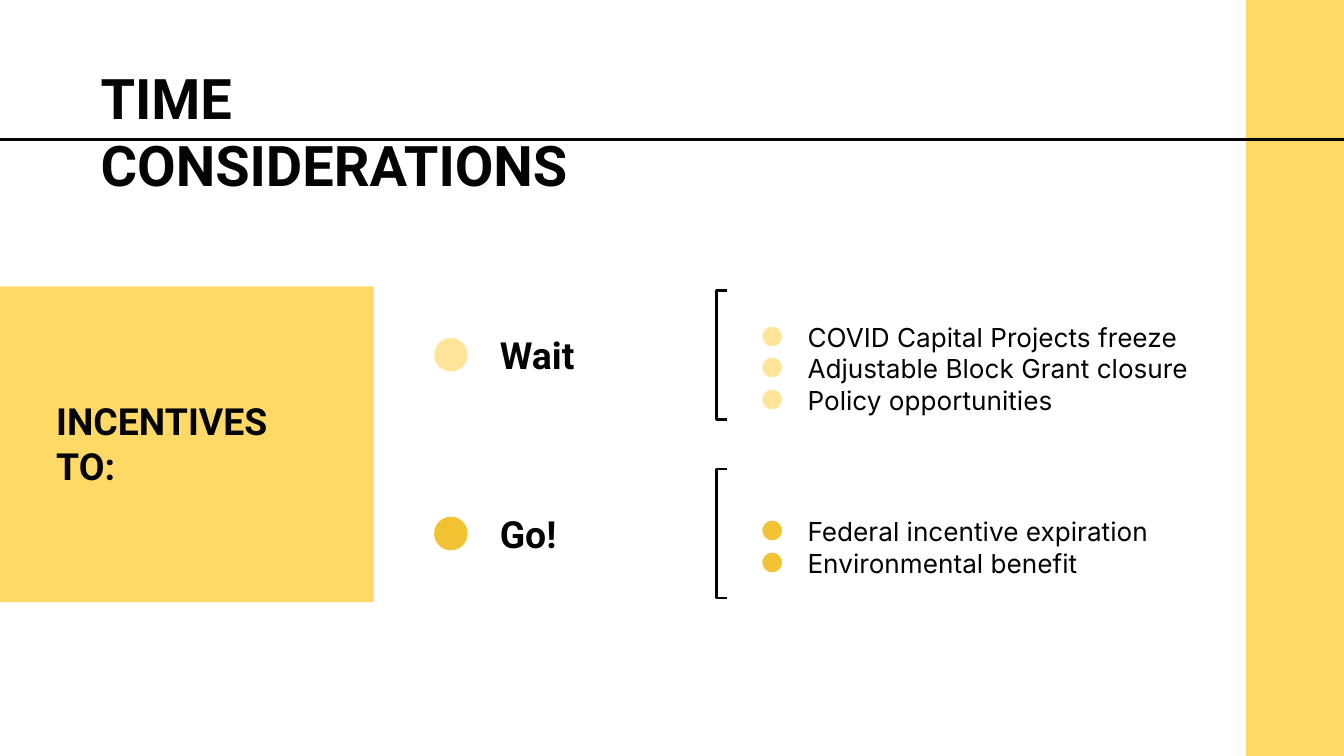
from lxml import etree
from pptx import Presentation
from pptx.dml.color import RGBColor
from pptx.enum.shapes import MSO_CONNECTOR, MSO_SHAPE
from pptx.enum.text import MSO_ANCHOR as ANCHOR, PP_ALIGN
from pptx.oxml.ns import qn
from pptx.util import Inches, Pt

# Content
TITLE = "TIME CONSIDERATIONS"
PANEL_LABEL = "INCENTIVES TO:"
OPTIONS = [
    {"name": "Wait", "color": "FFE599", "name_width": 1.99, "list_width": 3.59,
     "points": ["COVID Capital Projects freeze",
                "Adjustable Block Grant closure",
                "Policy opportunities"]},
    {"name": "Go!", "color": "F1C232", "name_width": 1.71, "list_width": 3.95,
     "points": ["Federal incentive expiration", "Environmental benefit"]},
]

# Format
INK, YELLOW = "040404", "FFD966"
TITLE_FONT = {"name": "Roboto", "size": Pt(30), "bold": True}
LABEL_FONT = {"name": "Roboto", "size": Pt(20), "bold": True}
LIST_FONT = {"name": "Inter", "size": Pt(14), "bold": False}

# Layout, on a 16:9 slide
WIDTH = 10
HEIGHT = WIDTH * 9 / 16
SIDEBAR_LEFT, RULE_TOP = 9.27, 1.04
FIRST_CENTER, ROW_STEP = 2.64, 1.33
ROW_HEIGHT, NAME_HEIGHT, DOT = 0.96, 0.63, 0.25
DOT_LEFT, NAME_LEFT, BRACKET_LEFT, LIST_LEFT = 3.23, 3.62, 5.33, 5.41


def rgb(value):
    return RGBColor.from_string(value)


def add_shape(kind, left, top, width, height, fill=None, line=None):
    shape = slide.shapes.add_shape(
        kind, Inches(left), Inches(top), Inches(width), Inches(height))
    shape.shadow.inherit = False
    if fill:
        shape.fill.solid()
        shape.fill.fore_color.rgb = rgb(fill)
    else:
        shape.fill.background()
    if line:
        shape.line.color.rgb = rgb(line)
        shape.line.width = Pt(1.5)
    else:
        shape.line.fill.background()
    return shape


def add_bullet(paragraph, color, font_name):
    properties = paragraph._p.get_or_add_pPr()
    properties.set("marL", str(Inches(0.5)))
    properties.set("indent", str(Inches(-0.35)))
    bullet_color = etree.SubElement(properties, qn("a:buClr"))
    etree.SubElement(bullet_color, qn("a:srgbClr"), val=color)
    etree.SubElement(properties, qn("a:buFont"), typeface=font_name)
    etree.SubElement(properties, qn("a:buChar"), char="●")


def add_text(lines, left, top, width, height, font,
             anchor=ANCHOR.MIDDLE, inset_top=0.1, bullet=None):
    box = slide.shapes.add_textbox(
        Inches(left), Inches(top), Inches(width), Inches(height))
    frame = box.text_frame
    frame.word_wrap = True
    frame.vertical_anchor = anchor
    frame.margin_left = frame.margin_right = frame.margin_bottom = Inches(0.1)
    frame.margin_top = Inches(inset_top)
    for index, line in enumerate(lines):
        paragraph = frame.add_paragraph() if index else frame.paragraphs[0]
        paragraph.alignment = PP_ALIGN.LEFT
        run = paragraph.add_run()
        run.text = line
        for key, value in font.items():
            setattr(run.font, key, value)
        run.font.color.rgb = rgb(INK)
        if bullet:
            add_bullet(paragraph, bullet, font["name"])


presentation = Presentation()
presentation.slide_width = Inches(WIDTH)
presentation.slide_height = Inches(HEIGHT)
slide = presentation.slides.add_slide(presentation.slide_layouts[6])

# Sidebar and rule across the title
add_shape(MSO_SHAPE.RECTANGLE, SIDEBAR_LEFT, 0, WIDTH - SIDEBAR_LEFT, HEIGHT, YELLOW)
rule = slide.shapes.add_connector(
    MSO_CONNECTOR.STRAIGHT, 0, Inches(RULE_TOP), Inches(WIDTH), Inches(RULE_TOP))
rule.line.color.rgb = rgb(INK)
rule.line.width = Pt(1.5)
etree.SubElement(rule._element.spPr, qn("a:effectLst"))
add_text([TITLE], 0.65, 0.37, 4.34, 0.74, TITLE_FONT, ANCHOR.TOP)

# Left panel
add_shape(MSO_SHAPE.RECTANGLE, 0, 2.13, 2.78, 2.35, YELLOW)
add_text([PANEL_LABEL], 0.32, 2.82, 1.99, 0.96, LABEL_FONT)

# One row per option: dot, name, bracket, list
for row, option in enumerate(OPTIONS):
    center = FIRST_CENTER + row * ROW_STEP
    row_top = center - ROW_HEIGHT / 2
    add_shape(MSO_SHAPE.OVAL, DOT_LEFT, center - DOT / 2, DOT, DOT, option["color"])
    add_text([option["name"]], NAME_LEFT, center - NAME_HEIGHT / 2,
             option["name_width"], NAME_HEIGHT, LABEL_FONT)
    bracket = add_shape(MSO_SHAPE.LEFT_BRACKET, BRACKET_LEFT, row_top,
                        LIST_LEFT - BRACKET_LEFT, ROW_HEIGHT, line=INK)
    bracket.adjustments[0] = 0
    add_text(option["points"], LIST_LEFT, row_top, option["list_width"], ROW_HEIGHT,
             LIST_FONT, inset_top=0.3, bullet=option["color"])

presentation.save("out.pptx")
